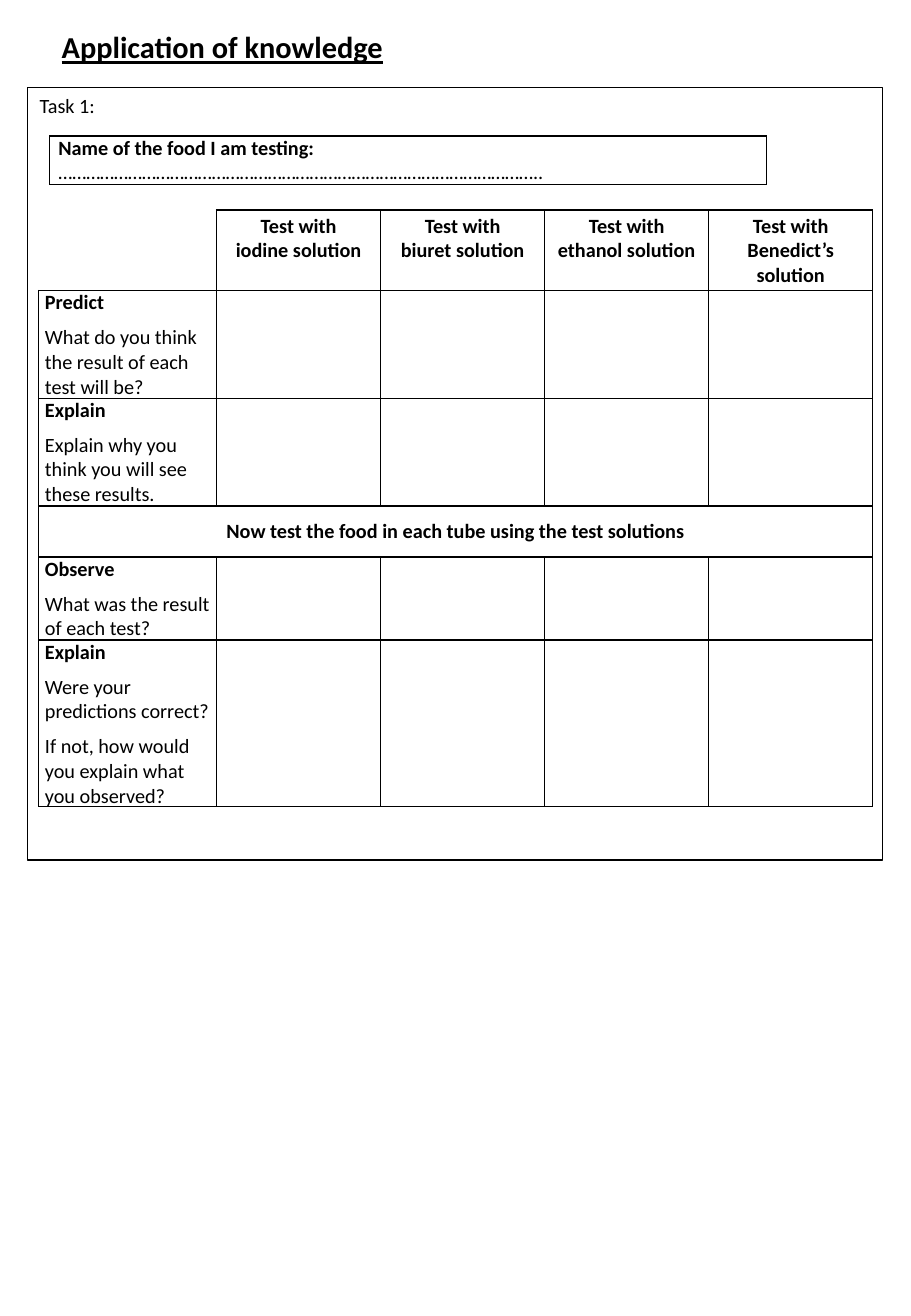
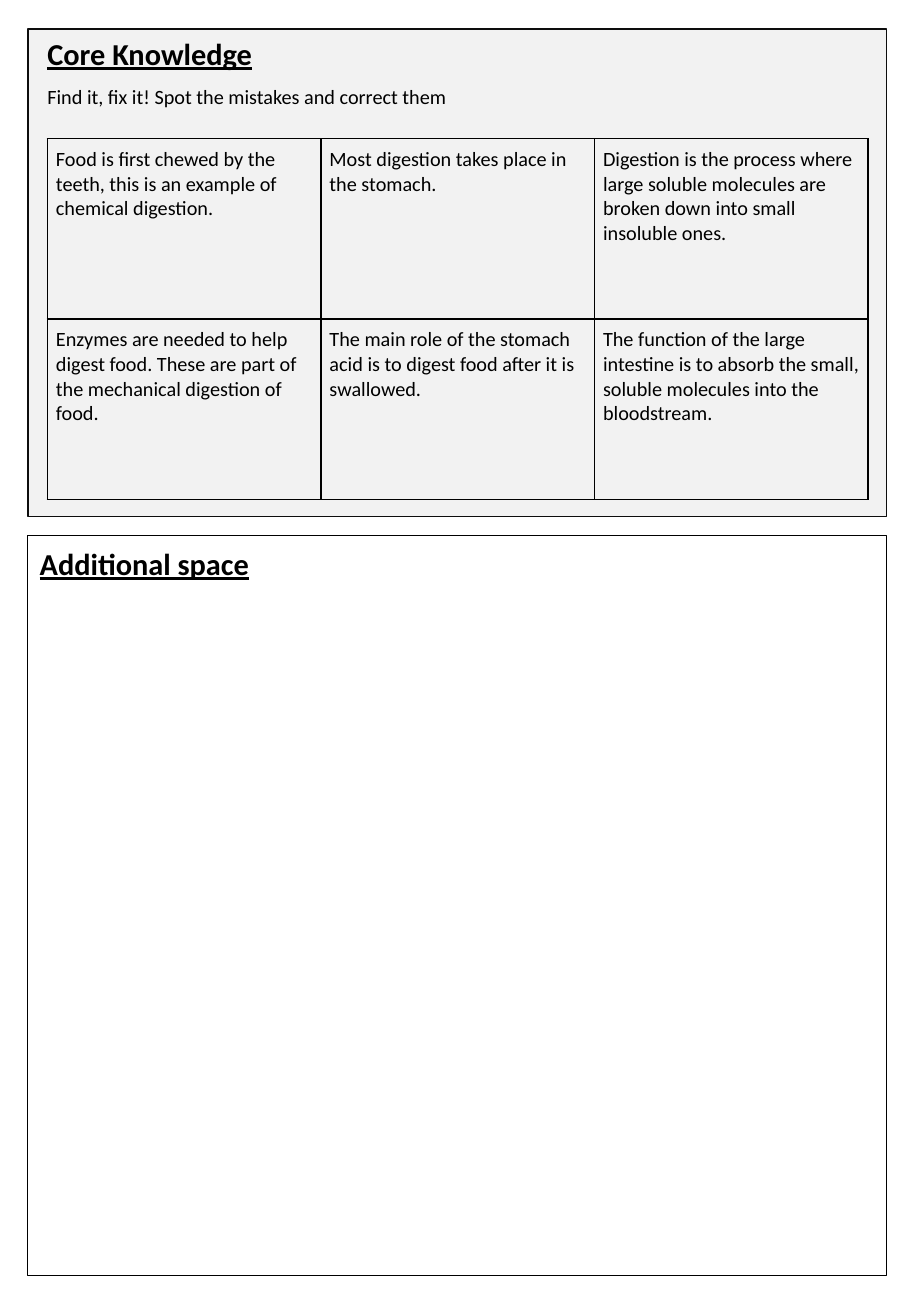
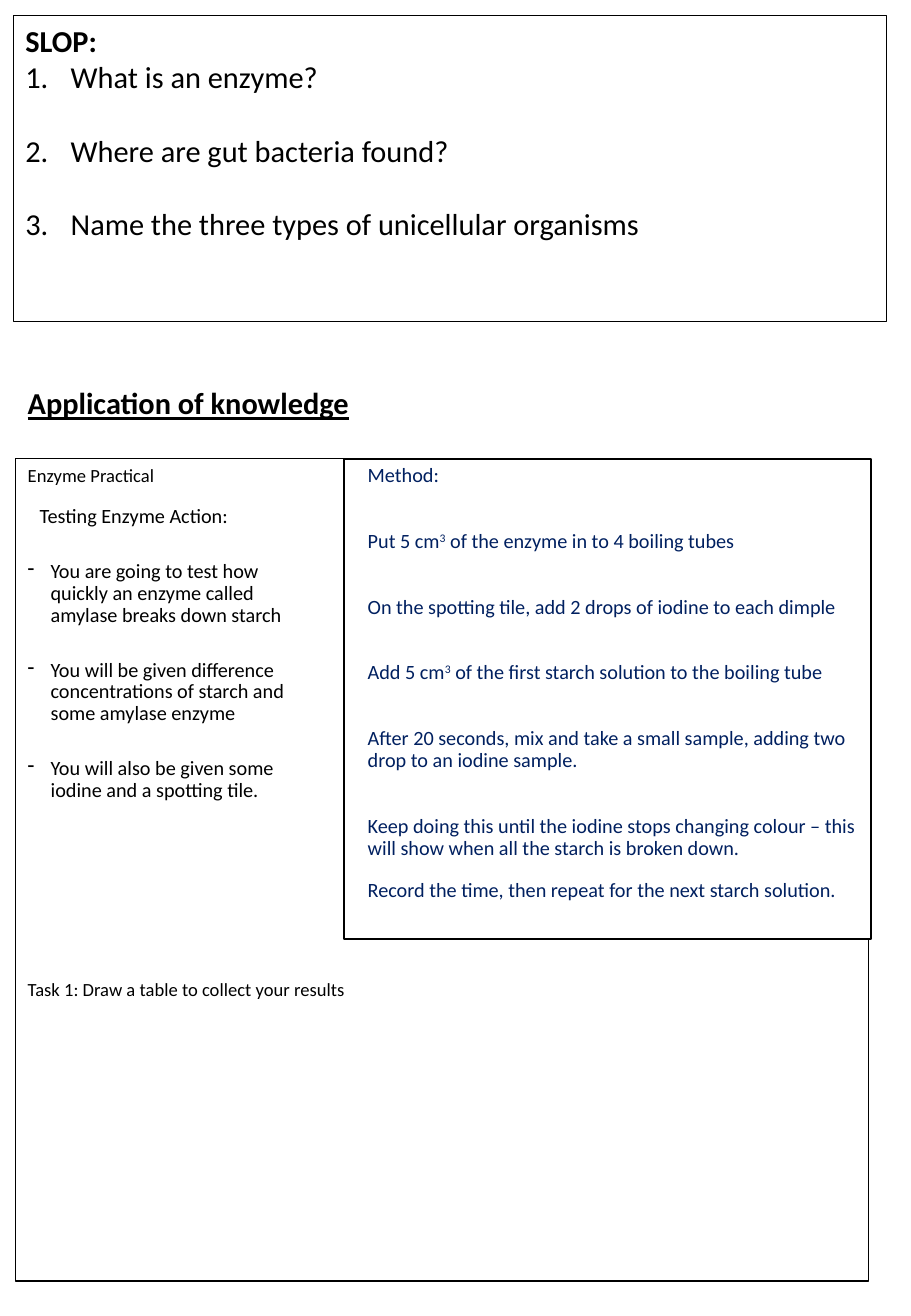
from dataclasses import dataclass

from lxml import etree
from pptx import Presentation
from pptx.dml.color import RGBColor
from pptx.enum.shapes import MSO_SHAPE
from pptx.enum.text import MSO_ANCHOR, PP_ALIGN
from pptx.oxml.ns import qn
from pptx.util import Cm, Pt

RECTANGLE = MSO_SHAPE.RECTANGLE
TOP = MSO_ANCHOR.TOP
LEFT, CENTER = PP_ALIGN.LEFT, PP_ALIGN.CENTER


# Theme
class Theme:
    font = "Calibri"
    ink = "000000"
    navy = "002060"
    panel = "F2F2F2"
    panel_line = "0D0D0D"
    white = "FFFFFF"
    heading = 18
    body = 12
    small = 11
    thin = 0.75
    rule = 1


@dataclass
class Para:
    runs: object  # plain text, or a list of (text, marks)
    size: int = Theme.body
    color: str = Theme.ink
    align: int = LEFT
    line: float = 1.0
    before: float = 0
    after: float = 0
    indent: float = 0
    hang: float = 0
    bullet: str = ""  # "-" or "1."


def write(frame, paras):
    frame.word_wrap = True
    for index, item in enumerate(paras):
        para = frame.paragraphs[0] if index == 0 else frame.add_paragraph()
        properties = para._p.get_or_add_pPr()
        properties.set("marL", str(Cm(item.indent)))
        properties.set("indent", str(-Cm(item.hang)))
        if item.bullet == "1.":
            etree.SubElement(properties, qn("a:buAutoNum"), type="arabicPeriod")
        elif item.bullet:
            etree.SubElement(properties, qn("a:buChar"), char=item.bullet)
        para.alignment = item.align
        para.line_spacing = item.line
        para.space_before = Pt(item.before if index else 0)
        para.space_after = Pt(item.after)
        runs = [(item.runs, "")] if isinstance(item.runs, str) else item.runs
        for text, marks in runs:
            span = para.add_run()
            span.text = text
            span.font.name = Theme.font
            span.font.size = Pt(item.size)
            span.font.color.rgb = RGBColor.from_string(item.color)
            span.font.bold = "bold" in marks
            span.font.underline = "underline" in marks
            if "raised" in marks:
                span._r.get_or_add_rPr().set("baseline", "30000")


def add_box(slide, area, paras, width=0, line=Theme.ink, fill=None):
    place = [Cm(length) for length in area]
    if not width:
        box = slide.shapes.add_textbox(*place)
    else:
        box = slide.shapes.add_shape(RECTANGLE, *place)
        box.shadow.inherit = False
        box.line.color.rgb = RGBColor.from_string(line)
        box.line.width = Pt(width)
        if fill:
            box.fill.solid()
            box.fill.fore_color.rgb = RGBColor.from_string(fill)
        else:
            box.fill.background()
    box.text_frame.vertical_anchor = TOP
    write(box.text_frame, paras)


deck = Presentation()
deck.slide_width, deck.slide_height = Cm(19.05), Cm(27.51)
food_slide, facts_slide, enzyme_slide = [
    deck.slides.add_slide(deck.slide_layouts[6]) for _ in range(3)]

# Section headings
for slide, left, top, heading, spacing in [
    (food_slide, 1.04, 0.56, "Application of knowledge", 0.9),
    (facts_slide, 0.58, 11.35, "Additional space", 0.9),
    (enzyme_slide, 0.33, 8, "Application of knowledge", 0.9),
]:
    add_box(slide, (left, top, 16.43, 1.27),
            [Para([(heading, "bold underline")], Theme.heading, line=spacing)])

# Food tests: task frame
add_box(food_slide, (0.58, 1.83, 17.88, 16.15), [Para("Task 1:")], Theme.thin)

# Core knowledge: panels
add_box(facts_slide, (0.58, 11.2, 17.96, 15.47), [], Theme.thin)
add_box(facts_slide, (0.58, 0.61, 17.96, 10.19), [], Theme.rule,
        Theme.panel_line, Theme.panel)
add_box(facts_slide, (0.74, 0.61, 9.53, 1.02),
        [Para([("Core Knowledge", "bold underline")], Theme.heading)])
add_box(facts_slide, (0.74, 1.63, 17.78, 1.75),
        [Para("Find it, fix it! Spot the mistakes and correct them")])

# Enzyme practical: outer frame, aims and method
add_box(enzyme_slide, (0.33, 9.58, 17.83, 17.2), [
    Para("Enzyme Practical", Theme.small),
    Para("Task 1: Draw a table to collect your results", Theme.small, before=291),
], Theme.thin)

aims = [
    "You are going to test how quickly an enzyme called amylase breaks down starch",
    "You will be given difference concentrations of starch and some amylase enzyme",
    "You will also be given some iodine and a spotting tile.",
]
add_box(enzyme_slide, (0.33, 10.46, 6.43, 9.17),
        [Para("Testing Enzyme Action:", line=0.9, after=12, indent=0.25)]
        + [Para(aim, line=0.9, before=7.5, after=12, indent=0.48, hang=0.48,
                bullet="-") for aim in aims])

steps = [
    "Method:",
    [("Put 5 cm", ""), ("3", "raised"), (" of the enzyme in to 4 boiling tubes", "")],
    "On the spotting tile, add 2 drops of iodine to each dimple",
    [("Add 5 cm", ""), ("3", "raised"),
     (" of the first starch solution to the boiling tube", "")],
    "After 20 seconds, mix and take a small sample, adding two drop to an iodine sample.",
    "Keep doing this until the iodine stops changing colour – this will show when "
    "all the starch is broken down.",
]
add_box(enzyme_slide, (7.19, 9.6, 11.02, 10.03),
        [Para(step, color=Theme.navy, line=0.9, before=14, after=12, indent=0.25)
         for step in steps]
        + [Para("Record the time, then repeat for the next starch solution.",
                color=Theme.navy, line=0.9, indent=0.25)],
        Theme.rule, fill=Theme.white)

# Recall questions
questions = [
    "What is an enzyme?",
    "Where are gut bacteria found?",
    "Name the three types of unicellular organisms",
]
add_box(enzyme_slide, (0.28, 0.33, 18.26, 6.4),
        [Para([("SLOP:", "bold")], Theme.heading)]
        + [Para(question, Theme.heading, before=22 if number else 0,
                indent=0.95, hang=0.95, bullet="1.")
           for number, question in enumerate(questions)],
        Theme.thin)

# Table contents: each row is height, vertical inset, right inset, cells
name_rows = [(1.02, 0, 0.18, [[Para([
    ("Name of the food I am testing:", "bold"),
    (" …………………………………………………………………………………………..", "")])]])]

solutions = ["iodine solution", "biuret solution", "ethanol solution",
             "Benedict’s solution"]
test_rows = [(1.65, 0.08, 0.13, [[]] + [
    [Para([(text, "bold")], align=CENTER) for text in ("Test with", solution)]
    for solution in solutions])]
for height, right, stage, prompts in [
    (2.25, 0.13, "Predict", ["What do you think the result of each test will be?"]),
    (2.25, 0.13, "Explain", ["Explain why you think you will see these results."]),
    (1.04, 0.13, "", []),
    (1.73, 0.13, "Observe", ["What was the result of each test?"]),
    (3.47, 0.03, "Explain", ["Were your predictions correct?",
                             "If not, how would you explain what you observed?"]),
]:
    if stage:
        label = [Para([(stage, "bold")], after=6)]
        label += [Para(prompt, after=6) for prompt in prompts]
        test_rows.append((height, 0, right, [label, [], [], [], []]))
    else:
        banner = Para([("Now test the food in each tube using the test solutions",
                        "bold")], align=CENTER)
        test_rows.append((height, 0.28, right, [[banner]]))

facts = [
    ["Food is first chewed by the teeth, this is an example of chemical digestion.",
     "Most digestion takes place in the stomach.",
     "Digestion is the process where large soluble molecules are broken down into "
     "small insoluble ones."],
    ["Enzymes are needed to help digest food. These are part of the mechanical "
     "digestion of food.",
     "The main role of the stomach acid is to digest food after it is swallowed.",
     "The function of the large intestine is to absorb the small, soluble molecules "
     "into the bloodstream."],
]
fact_rows = [(3.77, 0.18, 0.18, [[Para(fact)] for fact in row]) for row in facts]

# Tables
for slide, left, top, widths, inset, rows in [
    (food_slide, 1.04, 2.84, [14.99], 0.18, name_rows),
    (food_slide, 0.81, 4.39, [3.72] + [3.43] * 4, 0.13, test_rows),
    (facts_slide, 0.99, 2.9, [5.72] * 3, 0.18, fact_rows),
]:
    table = slide.shapes.add_table(
        len(rows), len(widths), Cm(left), Cm(top), Cm(sum(widths)),
        Cm(sum(row[0] for row in rows))).table
    table.first_row = table.horz_banding = False
    for column, width in zip(table.columns, widths):
        column.width = Cm(width)
    for row_number, (height, vertical, right, contents) in enumerate(rows):
        table.rows[row_number].height = Cm(height)
        cells = table.rows[row_number].cells
        if len(contents) < len(widths):
            cells[0].merge(cells[len(widths) - 1])
        for column_number, cell in enumerate(cells):
            paras = contents[column_number] if column_number < len(contents) else []
            corner = rows is test_rows and row_number == column_number == 0
            properties = cell._tc.get_or_add_tcPr()
            for side in "LRTB":
                border = etree.SubElement(properties, qn("a:ln" + side),
                                          w=str(Pt(Theme.rule)))
                if corner and side in "LT":
                    etree.SubElement(border, qn("a:noFill"))
                else:
                    paint = etree.SubElement(border, qn("a:solidFill"))
                    etree.SubElement(paint, qn("a:srgbClr"), val=Theme.ink)
            cell.fill.background()
            cell.margin_left, cell.margin_right = Cm(inset), Cm(right)
            cell.margin_top = cell.margin_bottom = Cm(vertical)
            write(cell.text_frame, paras)

deck.save("out.pptx")
